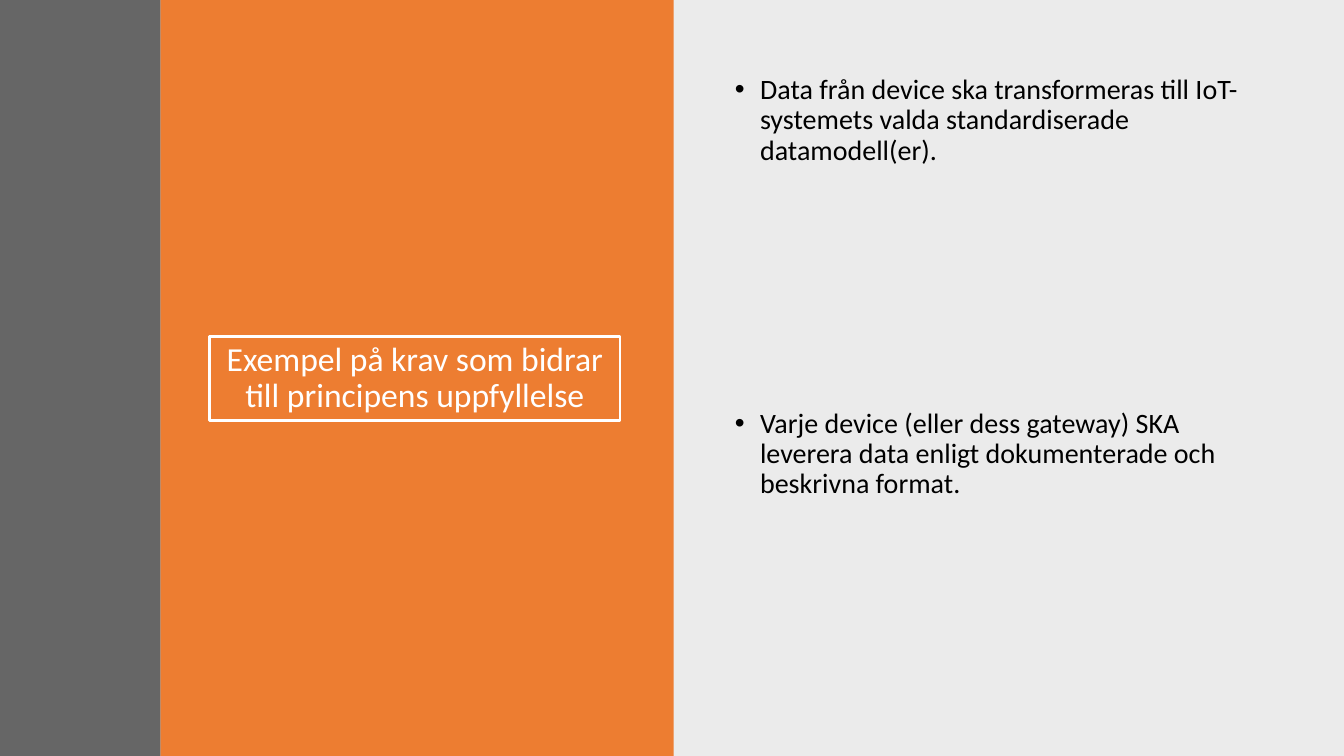
from pptx import Presentation
from pptx.dml.color import RGBColor
from pptx.enum.shapes import MSO_SHAPE
from pptx.enum.text import MSO_ANCHOR, MSO_AUTO_SIZE, PP_ALIGN
from pptx.oxml.ns import qn
from pptx.util import Inches, Pt
from lxml import etree

COLORS = {"white": "FFFFFF", "black": "000000", "orange": "ED7D31", "gray": "404040"}
FONT = "Calibri"
TITLE = "Exempel på krav som bidrar till principens uppfyllelse"
REQUIREMENTS = [
    "Data från device ska transformeras till IoT-systemets valda standardiserade datamodell(er).",
    "Varje device (eller dess gateway) SKA leverera data enligt dokumenterade och beskrivna format.",
]


def rgb(name):
    return RGBColor.from_string(COLORS[name])


def format_paragraph(p, size, color):
    p.line_spacing = 0.9
    for r in p.runs:
        r.font.name = FONT
        r.font.size = Pt(size)
        r.font.color.rgb = rgb(color)


def add_panel(s, left, width, color, opacity=100):
    """Full-height colour band, opacity in percent."""
    sp = s.shapes.add_shape(MSO_SHAPE.RECTANGLE, Inches(left), 0, Inches(width), Inches(7.5))
    sp.shadow.inherit = False
    sp.line.fill.background()
    sp.fill.solid()
    sp.fill.fore_color.rgb = rgb(color)
    if opacity < 100:
        clr = sp.element.spPr.find(qn("a:solidFill")).find(qn("a:srgbClr"))
        etree.SubElement(clr, qn("a:alpha")).set("val", str(opacity * 1000))


def format_title(s, text):
    sp = s.shapes.title
    sp.left, sp.top, sp.width, sp.height = map(Inches, (2.08, 3.34, 4.07, 0.83))
    sp.line.color.rgb = rgb("white")
    sp.line.width = Pt(2)
    tf = sp.text_frame
    tf.text = text
    tf.word_wrap = True
    tf.auto_size = MSO_AUTO_SIZE.NONE
    tf.vertical_anchor = MSO_ANCHOR.MIDDLE
    p = tf.paragraphs[0]
    p.alignment = PP_ALIGN.CENTER
    format_paragraph(p, 24, "white")
    # Bring the title in front of the panels
    sp.element.getparent().append(sp.element)


def add_bullet(s, top, text):
    sp = s.shapes.add_textbox(Inches(7.19), Inches(top), Inches(5.53), Inches(2.79))
    tf = sp.text_frame
    tf.word_wrap = True
    tf.text = text
    p = tf.paragraphs[0]
    p.space_before = Pt(10)
    format_paragraph(p, 20, "black")
    pPr = p._p.get_or_add_pPr()
    pPr.set("marL", str(Inches(0.25)))
    pPr.set("indent", str(-Inches(0.25)))
    etree.SubElement(pPr, qn("a:buFont")).set("typeface", "Arial")
    etree.SubElement(pPr, qn("a:buChar")).set("char", "•")


def main():
    prs = Presentation()
    prs.slide_width, prs.slide_height = Inches(13.33), Inches(7.5)
    s = prs.slides.add_slide(prs.slide_layouts[5])

    # Background panels
    add_panel(s, 6.67, 6.66, "black", 8)
    add_panel(s, 1.59, 5.09, "orange")
    add_panel(s, 0, 1.59, "gray", 80)

    # Framed title
    format_title(s, TITLE)

    # Requirements, evenly spaced down the right side
    for i, text in enumerate(REQUIREMENTS):
        add_bullet(s, 0.7 + i * 3.31, text)

    prs.save("out.pptx")


if __name__ == "__main__":
    main()
